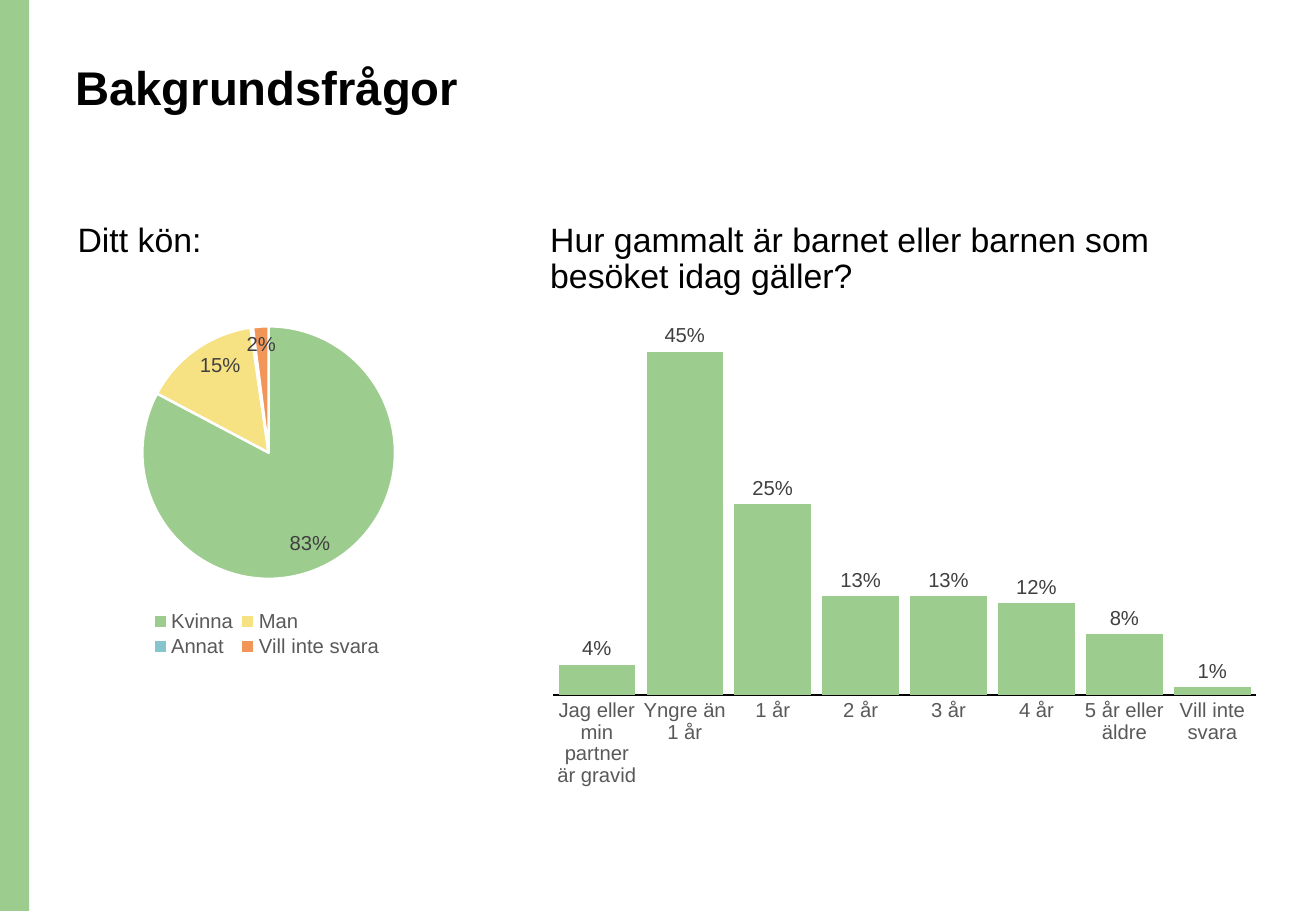
import pptx
import pptx.chart.data
import pptx.dml.color
import pptx.enum.chart
import pptx.enum.shapes
import pptx.enum.text
import pptx.oxml
import pptx.oxml.ns
import pptx.util

Inches, Pt = pptx.util.Inches, pptx.util.Pt
CT = pptx.enum.chart.XL_CHART_TYPE
LABEL_POS = pptx.enum.chart.XL_LABEL_POSITION

GREEN, BLACK, WHITE = "9DCC8F", "000000", "FFFFFF"
LABEL_GREY, AXIS_GREY = "404040", "595959"

TITLE = ("Bakgrundsfrågor", (0.52, 0.48, 9.34, 1.02))
QUESTIONS = [
    ("Ditt kön:", (0.54, 1.79, 4.58, 0.46)),
    ("Hur gammalt är barnet eller barnen som besöket idag gäller?", (4.43, 1.79, 6.03, 0.74)),
]
GENDER = [
    ("Kvinna", 0.83, GREEN),
    ("Man", 0.15, "F6E183"),
    ("Annat", 0.003, "85C5CB"),
    ("Vill inte svara", 0.02, "F29559"),
]
AGE = [
    ("Jag eller min partner är gravid", 0.04),
    ("Yngre än 1 år", 0.45),
    ("1 år", 0.25),
    ("2 år", 0.13),
    ("3 år", 0.13),
    ("4 år", 0.12),
    ("5 år eller äldre", 0.08),
    ("Vill inte svara", 0.01),
]
GENDER_BOX = (0.53, 2.54, 3.33, 2.93)
AGE_BOX = (4.43, 2.54, 6.03, 4.03)


def rgb(value):
    return pptx.dml.color.RGBColor.from_string(value)


def set_font(font, size, color, bold=False):
    values = {"name": "Arial", "size": Pt(size), "bold": bold}
    for name, value in values.items():
        setattr(font, name, value)
    font.color.rgb = rgb(color)


def fill(part, color):
    part.fill.solid()
    part.fill.fore_color.rgb = rgb(color)


def write(sp, text, size, bold=False, before=0):
    tf = sp.text_frame
    tf.word_wrap = True
    tf.auto_size = pptx.enum.text.MSO_AUTO_SIZE.NONE
    tf.vertical_anchor = pptx.enum.text.MSO_ANCHOR.TOP
    p = tf.paragraphs[0]
    p.alignment = pptx.enum.text.PP_ALIGN.LEFT
    p.line_spacing = 0.9
    p.space_before = Pt(before)
    r = p.add_run()
    r.text = text
    set_font(r.font, size, BLACK, bold)


def set_layout(element, index, x, y, w, h, inner=False):
    """Place a plot area or legend by fractions of its chart."""
    for old in element.findall(pptx.oxml.ns.qn("c:layout")):
        element.remove(old)
    target = '<c:layoutTarget val="inner"/>' if inner else ""
    modes = '<c:xMode val="edge"/><c:yMode val="edge"/>'
    sizes = "".join(f'<c:{k} val="{v}"/>' for k, v in zip("xywh", (x, y, w, h)))
    element.insert(index, pptx.oxml.parse_xml(
        f'<c:layout {pptx.oxml.ns.nsdecls("c")}><c:manualLayout>'
        f"{target}{modes}{sizes}</c:manualLayout></c:layout>"))


def add_chart(s, kind, rows, box, number_format, position, plot_box):
    data = pptx.chart.data.CategoryChartData(number_format="0%")
    data.categories = [row[0] for row in rows]
    data.add_series("Series 1", [row[1] for row in rows])
    chart = s.shapes.add_chart(kind, *map(Inches, box), data).chart
    chart.has_title = False
    chart.has_legend = False
    set_font(chart.font, 10, BLACK)
    plot = chart.plots[0]
    plot.vary_by_categories = kind == CT.PIE
    plot.has_data_labels = True
    labels = plot.data_labels
    values = {"show_value": True, "show_percentage": False, "number_format": number_format,
              "number_format_is_linked": False, "position": position}
    for name, value in values.items():
        setattr(labels, name, value)
    set_font(labels.font, 12, LABEL_GREY)
    plot_area = chart.element.find(".//" + pptx.oxml.ns.qn("c:plotArea"))
    set_layout(plot_area, 0, *plot_box, inner=True)
    return chart


def add_gender_chart(s):
    chart = add_chart(s, CT.PIE, GENDER, GENDER_BOX, '[<0.01]"";[>0.01]0%',
                      LABEL_POS.INSIDE_END, (0.19, 0.05, 0.63, 0.71))
    for i, (_, _, color) in enumerate(GENDER):
        form = chart.plots[0].series[0].points[i].format
        fill(form, color)
        form.line.color.rgb = rgb(WHITE)
        form.line.width = Pt(1.5)
    chart.has_legend = True
    legend = chart.legend
    legend.position = pptx.enum.chart.XL_LEGEND_POSITION.BOTTOM
    legend.include_in_layout = False
    set_font(legend.font, 12, AXIS_GREY)
    legend_element = chart.element.find(".//" + pptx.oxml.ns.qn("c:legend"))
    set_layout(legend_element, 1, 0.2, 0.84, 0.6, 0.15)


def add_age_chart(s):
    chart = add_chart(s, CT.COLUMN_CLUSTERED, AGE, AGE_BOX, "0%",
                      LABEL_POS.OUTSIDE_END, (0.02, 0.01, 0.96, 0.78))
    plot = chart.plots[0]
    plot.gap_width, plot.overlap = 15, -27
    fill(plot.series[0].format, GREEN)
    axis = chart.category_axis
    axis.major_tick_mark = pptx.enum.chart.XL_TICK_MARK.NONE
    axis.format.line.color.rgb = rgb(BLACK)
    axis.format.line.width = Pt(0.75)
    set_font(axis.tick_labels.font, 12, AXIS_GREY)
    values = {"minimum_scale": 0, "maximum_scale": 0.5,
              "has_major_gridlines": False, "visible": False}
    for name, value in values.items():
        setattr(chart.value_axis, name, value)


def main():
    prs = pptx.Presentation()
    prs.slide_width, prs.slide_height = Inches(10.83), Inches(7.5)
    s = prs.slides.add_slide(prs.slide_layouts[5])

    band = s.shapes.add_shape(pptx.enum.shapes.MSO_SHAPE.RECTANGLE, 0, 0,
                              Inches(0.24), prs.slide_height)
    band.shadow.inherit = False
    fill(band, GREEN)
    band.line.fill.background()

    text, box = TITLE
    title = s.shapes.title
    for name, value in zip(("left", "top", "width", "height"), box):
        setattr(title, name, Inches(value))
    write(title, text, 28, bold=True)

    for text, box in QUESTIONS:
        write(s.shapes.add_textbox(*map(Inches, box)), text, 20, before=10)

    add_gender_chart(s)
    add_age_chart(s)
    prs.save("out.pptx")


if __name__ == "__main__":
    main()
